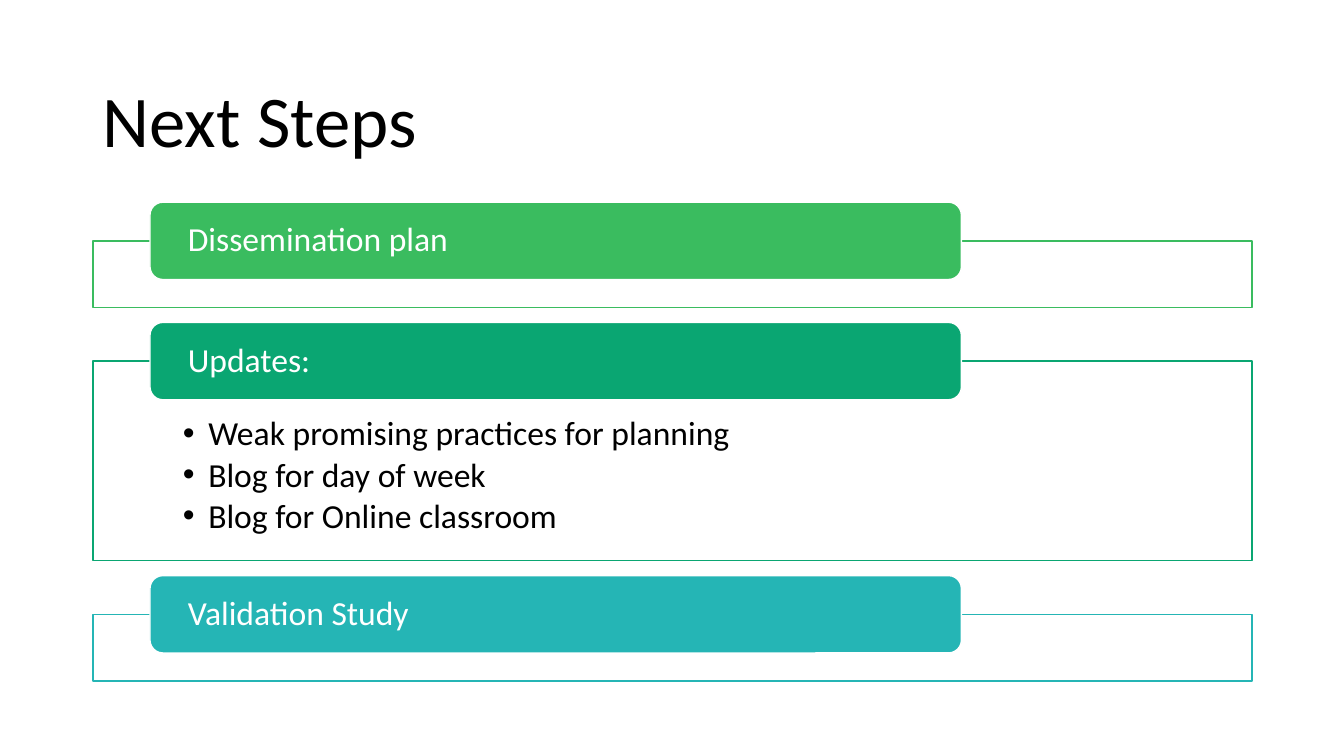
from dataclasses import dataclass

from lxml.etree import SubElement
from pptx import Presentation
from pptx.dml.color import RGBColor as Rgb
from pptx.enum.shapes import MSO_SHAPE as Geo
from pptx.enum.text import MSO_ANCHOR as Anchor, PP_ALIGN as Align
from pptx.oxml.ns import qn
from pptx.util import Cm, Pt

INK = {
    "black": "000000",
    "white": "FFFFFF",
    "green": "3ABC5F",
    "jade": "0AA672",
    "teal": "25B5B5",
}
LEFT, WIDTH = 2.34, 29.21
TOP, GAP = 6.07, 1.35
TAB_LEFT, TAB_WIDTH, TAB_HIGH = 3.78, 20.45, 1.95


@dataclass
class Step:
    label: str
    color: str
    height: float = 1.68
    items: tuple[str, ...] = ()


STEPS = (
    Step("Dissemination plan", "green"),
    Step("Updates:", "jade", 5.03, (
        "Weak promising practices for planning",
        "Blog for day of week",
        "Blog for Online classroom",
    )),
    Step("Validation Study", "teal"),
)


def rgb(name: str) -> Rgb:
    return Rgb.from_string(INK[name])


def set_frame(frame, anchor: Anchor, left: float, top: float, low: float) -> None:
    """Set wrap, anchor and insets; the right inset equals the left."""
    frame.word_wrap = True
    frame.vertical_anchor = anchor
    frame.margin_left = frame.margin_right = Cm(left)
    frame.margin_top, frame.margin_bottom = Cm(top), Cm(low)


def write(para, text: str, size: float, color: str) -> None:
    para.alignment = Align.LEFT
    para.line_spacing = 0.9
    run = para.add_run()
    run.text = text
    run.font.name = "Calibri"
    run.font.size = Pt(size)
    run.font.color.rgb = rgb(color)


def add_bullet(para) -> None:
    props = para._p.get_or_add_pPr()
    props.set("marL", str(Cm(0.64)))
    props.set("indent", str(-Cm(0.64)))
    SubElement(props, qn("a:buFont"), typeface="Arial")
    SubElement(props, qn("a:buChar"), char="•")


def add_box(slide, geo: Geo, left: float, top: float, width: float,
            height: float, fill: str, line: str):
    box = slide.shapes.add_shape(geo, Cm(left), Cm(top), Cm(width), Cm(height))
    box.shadow.inherit = False
    box.fill.solid()
    box.fill.fore_color.rgb = rgb(fill)
    box.line.color.rgb = rgb(line)
    box.line.width = Pt(1)
    return box


def add_step(slide, step: Step, top: float) -> None:
    body = add_box(slide, Geo.RECTANGLE, LEFT, top, WIDTH, step.height,
                   "white", step.color)
    if step.items:
        frame = body.text_frame
        set_frame(frame, Anchor.TOP, 2.27, 1.4, 0.48)
        for num, item in enumerate(step.items):
            para = frame.add_paragraph() if num else frame.paragraphs[0]
            write(para, item, 24, "black")
            para.space_after = Pt(3.6)
            add_bullet(para)
    tab = add_box(slide, Geo.ROUNDED_RECTANGLE, TAB_LEFT, top - TAB_HIGH / 2,
                  TAB_WIDTH, TAB_HIGH, step.color, "white")
    set_frame(tab.text_frame, Anchor.MIDDLE, 0.86, 0, 0)
    write(tab.text_frame.paragraphs[0], step.label, 24, "white")


def main() -> None:
    deck = Presentation()
    deck.slide_width, deck.slide_height = Cm(33.87), Cm(19.05)
    slide = deck.slides.add_slide(deck.slide_layouts[6])

    title = slide.shapes.add_textbox(Cm(LEFT), Cm(1.55), Cm(WIDTH), Cm(3.15))
    set_frame(title.text_frame, Anchor.MIDDLE, 0.25, 0.13, 0.13)
    write(title.text_frame.paragraphs[0], "Next Steps", 52, "black")

    top = TOP
    for step in STEPS:
        add_step(slide, step, top)
        top += step.height + GAP
    deck.save("out.pptx")


if __name__ == "__main__":
    main()
